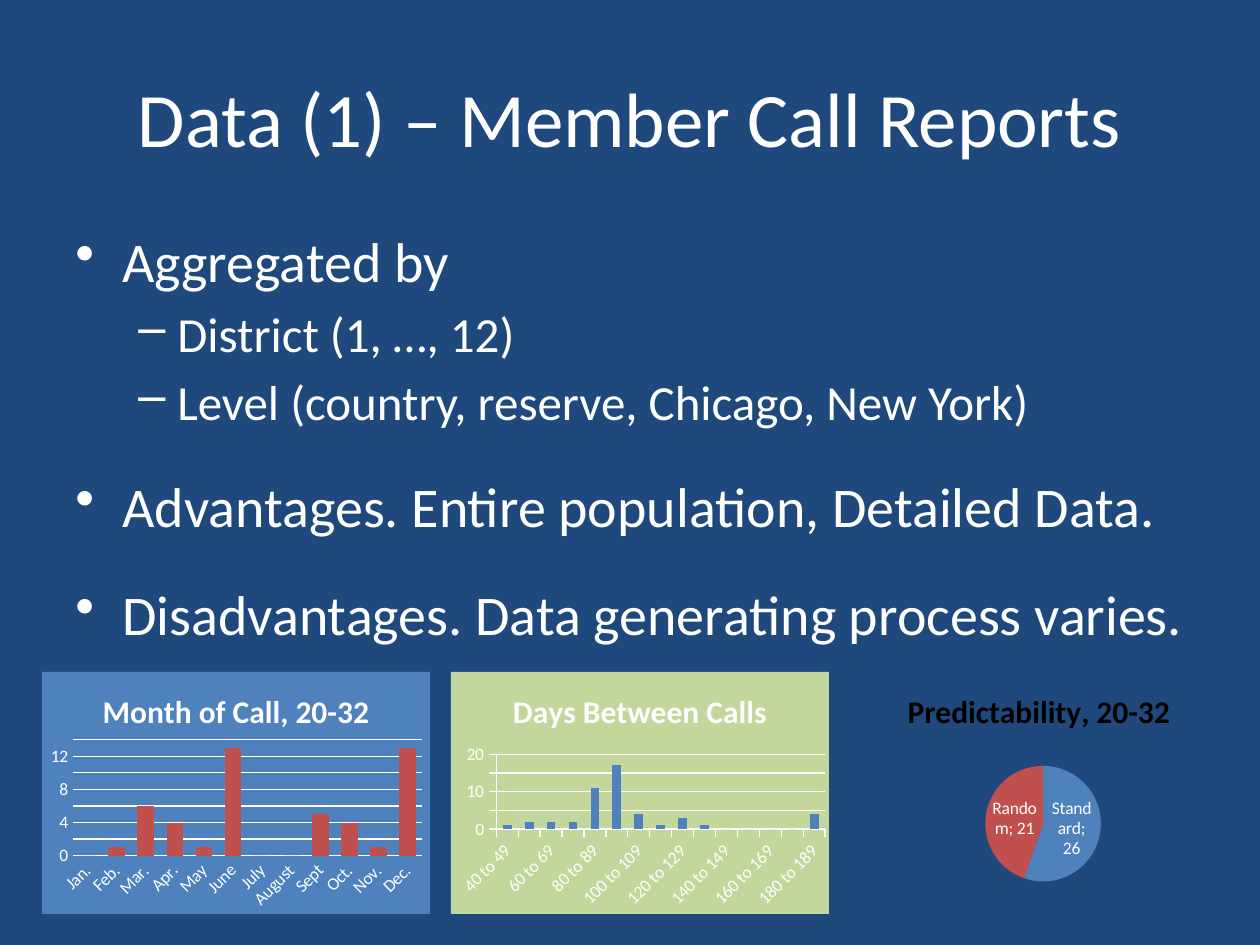
"""Builds the member call reports slide with two column charts and a pie."""
from lxml.etree import SubElement
from pptx import Presentation
from pptx.chart.data import CategoryChartData
from pptx.dml.color import RGBColor
from pptx.enum.chart import XL_CHART_TYPE as CT, XL_LABEL_POSITION as LP, XL_TICK_MARK as TM
from pptx.enum.text import MSO_ANCHOR, PP_ALIGN
from pptx.oxml import parse_xml
from pptx.oxml.ns import nsdecls, qn
from pptx.util import Pt

PX = 914400 // 126
FONT = "Calibri"
COLORS = {"navy": "1F497D", "white": "FFFFFF", "black": "000000",
          "blue": "4F81BD", "red": "C0504D", "green": "C3D69B"}
BULLETS = [
    ("Aggregated by", 0, 6.4),
    ("District (1, …, 12)", 1, 5.6),
    ("Level (country, reserve, Chicago, New York)", 1, 5.6),
    ("Advantages. Entire population, Detailed Data.", 0, 23.4),
    ("Disadvantages. Data generating process varies.", 0, 23.4),
]
LEVELS = [("•", 32, 47, 47), ("–", 28, 102, 39)]
MONTHS = ["Jan.", "Feb.", "Mar.", "Apr.", "May", "June",
          "July", "August", "Sept", "Oct.", "Nov.", "Dec."]
MONTH_CALLS = [0, 1, 6, 4, 1, 13, 0, 0, 5, 4, 1, 13]
DAYS = [f"{d} to {d + 9}" for d in range(40, 190, 10)]
DAY_CALLS = [1, 2, 2, 2, 11, 17, 4, 1, 3, 1, 0, 0, 0, 0, 4]


def rgb(name):
    return RGBColor.from_string(COLORS[name])


def paint(fill, color):
    fill.solid()
    fill.fore_color.rgb = rgb(color)


def set_font(font, size, color="white", bold=False):
    font.name, font.size, font.bold = FONT, Pt(size), bold
    font.color.rgb = rgb(color)


def add_text_frame(slide, box):
    tf = slide.shapes.add_textbox(*(v * PX for v in box)).text_frame
    tf.word_wrap = True
    return tf


def add_title(slide, text, box):
    tf = add_text_frame(slide, box)
    tf.vertical_anchor = MSO_ANCHOR.MIDDLE
    p = tf.paragraphs[0]
    p.text, p.alignment = text, PP_ALIGN.CENTER
    set_font(p.font, 44)


def add_bullets(slide, items, box):
    tf = add_text_frame(slide, box)
    for i, (text, level, before) in enumerate(items):
        p = tf.add_paragraph() if i else tf.paragraphs[0]
        char, size, margin, hang = LEVELS[level]
        p.text, p.level, p.space_before = text, level, Pt(before)
        set_font(p.font, size)
        pPr = p._p.get_or_add_pPr()
        pPr.set("marL", str(margin * PX))
        pPr.set("indent", str(-hang * PX))
        bullet = parse_xml(f'<a:buChar {nsdecls("a")} char="{char}"/>')
        pPr.insert_element_before(bullet, "a:tabLst", "a:defRPr", "a:extLst")


def set_background(chart, color):
    fill = (f'<a:solidFill><a:srgbClr val="{COLORS[color]}"/></a:solidFill>'
            if color else "<a:noFill/>")
    chart._chartSpace.chart.addnext(parse_xml(
        f'<c:spPr {nsdecls("c", "a")}>{fill}<a:ln><a:noFill/></a:ln></c:spPr>'))


def place_plot(chart, box, plot):
    """Pins the inner plot area, given in slide px, inside the chart box."""
    area = chart._chartSpace.chart.plotArea
    for old in area.findall(qn("c:layout")):
        area.remove(old)
    layout = parse_xml(f'<c:layout {nsdecls("c")}><c:manualLayout/></c:layout>')
    x, y, w, h = box
    values = [("layoutTarget", "inner"), ("xMode", "edge"), ("yMode", "edge"),
              ("x", round((plot[0] - x) / w, 2)), ("y", round((plot[1] - y) / h, 2)),
              ("w", round(plot[2] / w, 2)), ("h", round(plot[3] / h, 2))]
    for tag, value in values:
        SubElement(layout[0], qn(f"c:{tag}")).set("val", str(value))
    area.insert(0, layout)


def add_chart(slide, kind, title, cats, vals, box, plot, back=None, title_color="white"):
    data = CategoryChartData()
    data.categories = cats
    data.add_series("Series 1", vals)
    chart = slide.shapes.add_chart(kind, *(v * PX for v in box), data).chart
    set_font(chart.font, 10)
    chart.has_legend = False
    p = chart.chart_title.text_frame.paragraphs[0]
    p.text = title
    set_font(p.font, 18, title_color, True)
    set_background(chart, back)
    place_plot(chart, box, plot)
    return chart


def style_columns(chart, color, gap, overlap, top, unit, tick, value_line):
    plot = chart.plots[0]
    plot.gap_width, plot.overlap, plot.vary_by_categories = gap, overlap, False
    paint(plot.series[0].format.fill, color)
    cat, val = chart.category_axis, chart.value_axis
    val.minimum_scale, val.maximum_scale, val.major_unit = 0, top, unit
    val.has_major_gridlines = True
    for axis in (cat, val):
        axis.major_tick_mark, axis.minor_tick_mark = tick, TM.NONE
    for line in (cat.format.line, val.format.line, val.major_gridlines.format.line):
        paint(line.fill, "white")
        line.width = Pt(0.75)
    if not value_line:
        val.format.line.fill.background()
    cat.tick_labels.font.size = Pt(10)
    cat._element.txPr.find(qn("a:bodyPr")).set("rot", "-2700000")


def style_pie(chart, colors):
    plot = chart.plots[0]
    plot.vary_by_categories = True
    for i, color in enumerate(colors):
        paint(plot.series[0].points[i].format.fill, color)
    plot.has_data_labels = True
    labels = plot.data_labels
    labels.show_value = labels.show_category_name = True
    labels.show_percentage = False
    labels.position = LP.CENTER
    set_font(labels.font, 10)


def main():
    prs = Presentation()
    prs.slide_width, prs.slide_height = 1260 * PX, 945 * PX
    slide = prs.slides.add_slide(prs.slide_layouts[6])
    paint(slide.background.fill, "navy")
    add_title(slide, "Data (1) – Member Call Reports", (63, 38, 1134, 157))
    add_bullets(slide, BULLETS, (63, 220, 1187, 725))
    months = add_chart(slide, CT.COLUMN_CLUSTERED, "Month of Call, 20-32", MONTHS,
                       MONTH_CALLS, (42, 672, 388, 242), (72, 739, 351, 117), "blue")
    style_columns(months, "red", 75, -25, 14, 2, TM.NONE, False)
    days = add_chart(slide, CT.COLUMN_CLUSTERED, "Days Between Calls", DAYS,
                     DAY_CALLS, (451, 672, 378, 242), (495, 755, 327, 74), "green")
    style_columns(days, "blue", 150, 0, 20, 5, TM.OUTSIDE, True)
    pie = add_chart(slide, CT.PIE, "Predictability, 20-32", ["Standard", "Random"],
                    [26, 21], (829, 672, 420, 241), (986, 765, 116, 116),
                    title_color="black")
    style_pie(pie, ["blue", "red"])
    prs.save("out.pptx")


if __name__ == "__main__":
    main()
